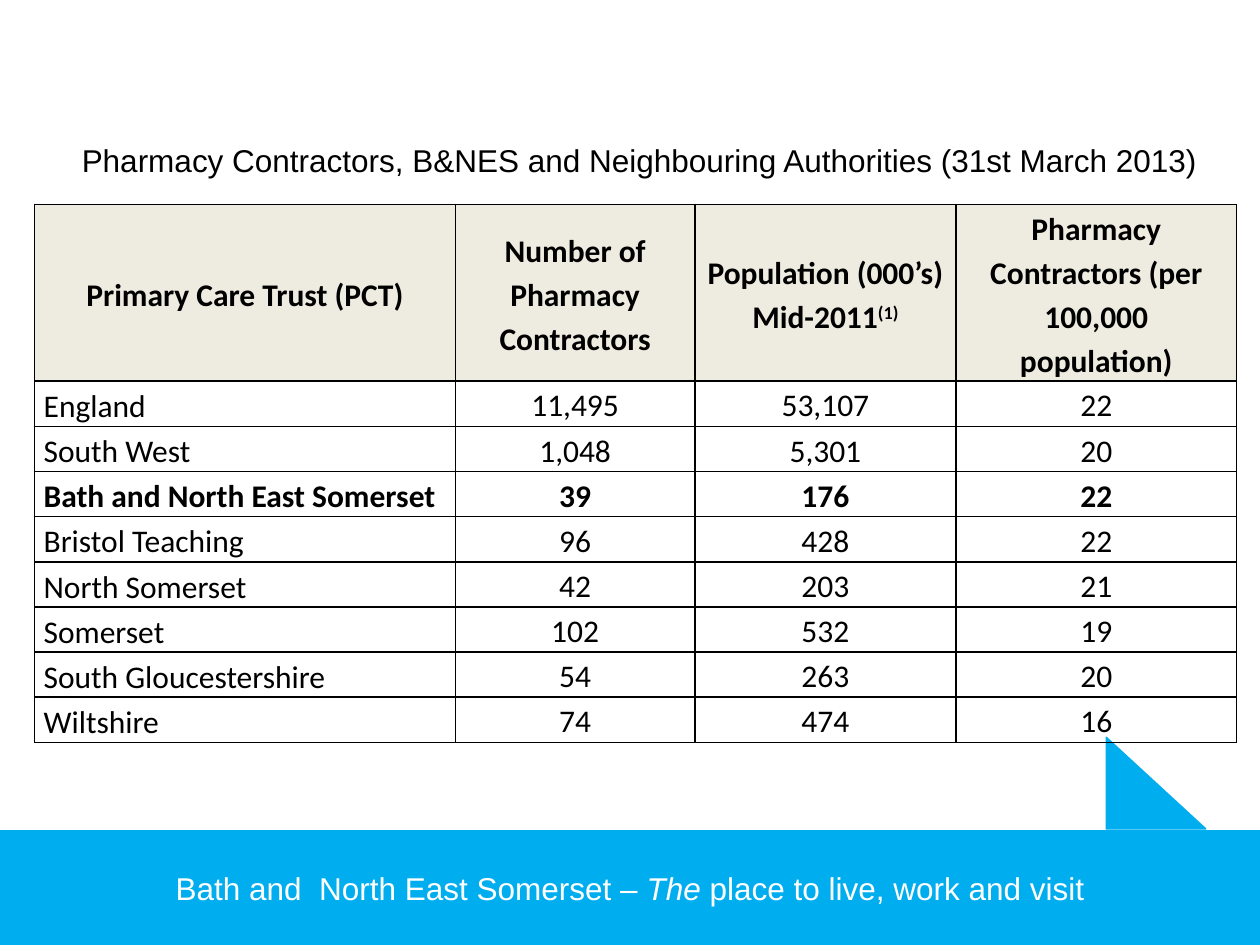
from dataclasses import dataclass

import lxml.etree
import pptx
import pptx.dml.color
import pptx.enum.shapes
import pptx.enum.text
import pptx.oxml.ns
import pptx.util

Cm = pptx.util.Cm
Pt = pptx.util.Pt
ALIGN = pptx.enum.text.PP_ALIGN
ANCHOR = pptx.enum.text.MSO_ANCHOR
SHAPE = pptx.enum.shapes.MSO_SHAPE

BLUE = "00AEEF"
BLACK = "000000"
WHITE = "FFFFFF"
HEADER_FILL = "EEECE1"

COLUMN_WIDTHS = (8.48, 4.83, 5.26, 5.66)
HEADER_HEIGHT = 2.72
ROW_HEIGHT = 0.91
FOOTNOTE_MARK = "(1)"
HEADERS = (
    "Primary Care Trust (PCT)",
    "Number of Pharmacy Contractors",
    "Population (000’s) Mid-2011",
    "Pharmacy Contractors (per 100,000 population)",
)


@dataclass
class Trust:
    name: str
    contractors: str
    population: str
    rate: str
    bold: bool = False


@dataclass
class Block:
    kind: SHAPE
    left: float
    top: float
    width: float
    height: float


TRUSTS = (
    Trust("England", "11,495", "53,107", "22"),
    Trust("South West", "1,048", "5,301", "20"),
    Trust("Bath and North East Somerset", "39", "176", "22", bold=True),
    Trust("Bristol Teaching", "96", "428", "22"),
    Trust("North Somerset", "42", "203", "21"),
    Trust("Somerset", "102", "532", "19"),
    Trust("South Gloucestershire", "54", "263", "20"),
    Trust("Wiltshire", "74", "474", "16"),
)
POINTER = Block(SHAPE.RIGHT_TRIANGLE, 22.3, 14.86, 2.01, 1.85)
FOOTER = Block(SHAPE.RECTANGLE, 0, 16.74, 25.4, 2.31)


def colour(value: str) -> pptx.dml.color.RGBColor:
    return pptx.dml.color.RGBColor.from_string(value)


def style_span(span, font: str, hex_colour: str, bold: bool = False) -> None:
    span.font.name = font
    span.font.size = Pt(18)
    span.font.bold = bold
    span.font.color.rgb = colour(hex_colour)


def draw_block(page, block: Block):
    box = page.shapes.add_shape(
        block.kind, Cm(block.left), Cm(block.top), Cm(block.width), Cm(block.height)
    )
    box.shadow.inherit = False
    box.fill.solid()
    box.fill.fore_color.rgb = colour(BLUE)
    box.line.color.rgb = colour(BLUE)
    box.line.width = Pt(0.75)
    return box


def draw_footer(page) -> None:
    frame = draw_block(page, FOOTER).text_frame
    frame.word_wrap = False
    frame.vertical_anchor = ANCHOR.MIDDLE
    para = frame.paragraphs[0]
    para.alignment = ALIGN.CENTER
    parts = (
        ("Bath and  North East Somerset – ", False),
        ("The", True),
        (" place to live, work and visit", False),
    )
    for text, italic in parts:
        span = para.add_run()
        span.text = text
        style_span(span, "Arial", WHITE)
        span.font.italic = italic


def draw_heading(page) -> None:
    box = page.shapes.add_textbox(Cm(0.79), Cm(2.72), Cm(24.2), Cm(1.02))
    frame = box.text_frame
    frame.word_wrap = True
    frame.text = "Pharmacy Contractors, B&NES and Neighbouring Authorities (31st March 2013)"
    para = frame.paragraphs[0]
    para.alignment = ALIGN.CENTER
    style_span(para.runs[0], "Arial", BLACK)


def add_borders(cell) -> None:
    qn = pptx.oxml.ns.qn
    properties = cell._tc.get_or_add_tcPr()
    for side in ("lnL", "lnR", "lnT", "lnB"):
        line = lxml.etree.SubElement(properties, qn(f"a:{side}"), w=str(Pt(1)))
        fill = lxml.etree.SubElement(line, qn("a:solidFill"))
        lxml.etree.SubElement(fill, qn("a:srgbClr"), val=BLACK)


def fill_cell(cell, text: str, align: ALIGN, anchor: ANCHOR, bold: bool) -> None:
    cell.margin_left = cell.margin_right = Cm(0.18)
    cell.margin_top = cell.margin_bottom = 0
    cell.vertical_anchor = anchor
    add_borders(cell)
    cell.fill.background()
    cell.text_frame.text = text
    para = cell.text_frame.paragraphs[0]
    para.alignment = align
    para.line_spacing = 1.15
    style_span(para.runs[0], "Calibri", BLACK, bold)


def add_footnote_mark(cell) -> None:
    span = cell.text_frame.paragraphs[0].add_run()
    span.text = FOOTNOTE_MARK
    style_span(span, "Calibri", BLACK, bold=True)
    span._r.get_or_add_rPr().set("baseline", "30000")


def draw_table(page) -> None:
    height = HEADER_HEIGHT + ROW_HEIGHT * len(TRUSTS)
    table = page.shapes.add_table(
        len(TRUSTS) + 1, len(HEADERS), Cm(0.7), Cm(4.12), Cm(sum(COLUMN_WIDTHS)), Cm(height)
    ).table
    table.first_row = False
    table.horz_banding = False
    for column, width in zip(table.columns, COLUMN_WIDTHS):
        column.width = Cm(width)
    for index, row in enumerate(table.rows):
        row.height = Cm(ROW_HEIGHT if index else HEADER_HEIGHT)

    for column, text in enumerate(HEADERS):
        cell = table.cell(0, column)
        fill_cell(cell, text, ALIGN.CENTER, ANCHOR.MIDDLE, True)
        cell.fill.solid()
        cell.fill.fore_color.rgb = colour(HEADER_FILL)
    add_footnote_mark(table.cell(0, 2))

    for row, trust in enumerate(TRUSTS, start=1):
        fill_cell(table.cell(row, 0), trust.name, ALIGN.LEFT, ANCHOR.MIDDLE, trust.bold)
        values = (trust.contractors, trust.population, trust.rate)
        for column, value in enumerate(values, start=1):
            fill_cell(table.cell(row, column), value, ALIGN.CENTER, ANCHOR.TOP, trust.bold)


def main() -> None:
    deck = pptx.Presentation()
    deck.slide_width = Cm(25.4)
    deck.slide_height = Cm(19.05)
    page = deck.slides.add_slide(deck.slide_layouts[6])
    draw_block(page, POINTER)
    draw_footer(page)
    draw_table(page)
    draw_heading(page)
    deck.save("out.pptx")


if __name__ == "__main__":
    main()
